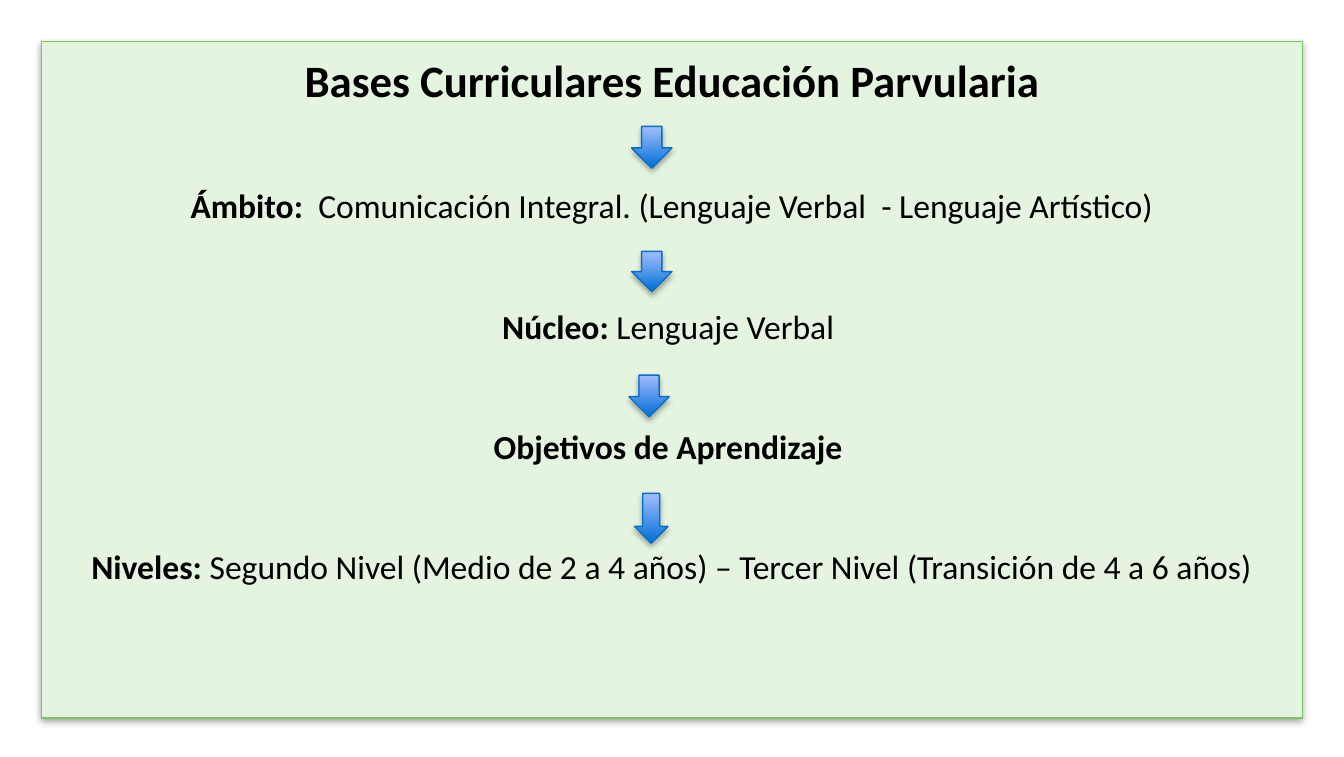
import lxml.etree
import pptx
import pptx.dml.color
import pptx.enum.shapes
import pptx.enum.text
import pptx.oxml.ns
import pptx.util

Inches = pptx.util.Inches
Pt = pptx.util.Pt
SHAPES = pptx.enum.shapes.MSO_SHAPE

COLORS = {
    "panel": "E5F4E0",
    "panel_line": "78C85D",
    "arrow_bottom": "0070D5",
    "arrow_top": "A3BDFF",
    "arrow_line": "0A6DC6",
    "text": "000000",
    "shadow": "000000",
}
LEVELS = [
    (24, 0, [("Bases Curriculares Educación Parvularia", True)]),
    (18, 42.3, [("Ámbito: ", True), (" Comunicación Integral. (Lenguaje Verbal  - Lenguaje Artístico)", False)]),
    (18, 42.8, [("Núcleo: ", True), ("Lenguaje Verbal ", False)]),
    (18, 42.8, [("Objetivos de Aprendizaje ", True)]),
    (18, 42.8, [("Niveles: ", True), ("Segundo Nivel (Medio de 2 a 4 años) – Tercer Nivel (Transición de 4 a 6 años)", False)]),
]
ARROWS = [
    (4.7, 0.94, 0.3, 0.31),
    (4.7, 1.87, 0.3, 0.3),
    (4.68, 2.79, 0.3, 0.31),
    (4.72, 3.67, 0.25, 0.37),
]


def color(name):
    return pptx.dml.color.RGBColor.from_string(COLORS[name])


def add_outlined_shape(page, kind, bounds, line_name, distance, opacity):
    shape = page.shapes.add_shape(kind, *map(Inches, bounds))
    shape.line.color.rgb = color(line_name)
    shape.line.width = Pt(0.75)
    shape.shadow.inherit = False
    qn = pptx.oxml.ns.qn
    effects = shape.element.spPr.find(qn("a:effectLst"))
    shadow = lxml.etree.SubElement(effects, qn("a:outerShdw"), {
        "blurRad": str(Pt(3.1)), "dist": str(Pt(distance)),
        "dir": "5400000", "rotWithShape": "0",
    })
    tint = lxml.etree.SubElement(shadow, qn("a:srgbClr"), val=COLORS["shadow"])
    lxml.etree.SubElement(tint, qn("a:alpha"), val=str(opacity * 1000))
    return shape


deck = pptx.Presentation()
deck.slide_width = Inches(10)
deck.slide_height = Inches(5.63)
page = deck.slides.add_slide(deck.slide_layouts[6])

panel = add_outlined_shape(page, SHAPES.RECTANGLE, (0.31, 0.31, 9.38, 5.03), "panel_line", 1.6, 38)
panel.fill.solid()
panel.fill.fore_color.rgb = color("panel")

frame = panel.text_frame
frame_format = {
    "word_wrap": True,
    "vertical_anchor": pptx.enum.text.MSO_ANCHOR.TOP,
    "margin_top": Inches(0.08),
    "margin_left": Inches(0.1),
    "margin_right": Inches(0.1),
}
for name, value in frame_format.items():
    setattr(frame, name, value)

for index, (size, gap, spans) in enumerate(LEVELS):
    para = frame.add_paragraph() if index else frame.paragraphs[0]
    para.alignment = pptx.enum.text.PP_ALIGN.CENTER
    para.space_before = Pt(gap)
    for text, bold in spans:
        span = para.add_run()
        span.text = text
        for name, value in {"name": "Calibri", "size": Pt(size), "bold": bold}.items():
            setattr(span.font, name, value)
        span.font.color.rgb = color("text")

for bounds in ARROWS:
    arrow = add_outlined_shape(page, SHAPES.DOWN_ARROW, bounds, "arrow_line", 1.8, 35)
    arrow.fill.gradient()
    arrow.fill.gradient_angle = 90
    for stop, name in zip(arrow.fill.gradient_stops, ("arrow_bottom", "arrow_top")):
        stop.color.rgb = color(name)

deck.save("out.pptx")
